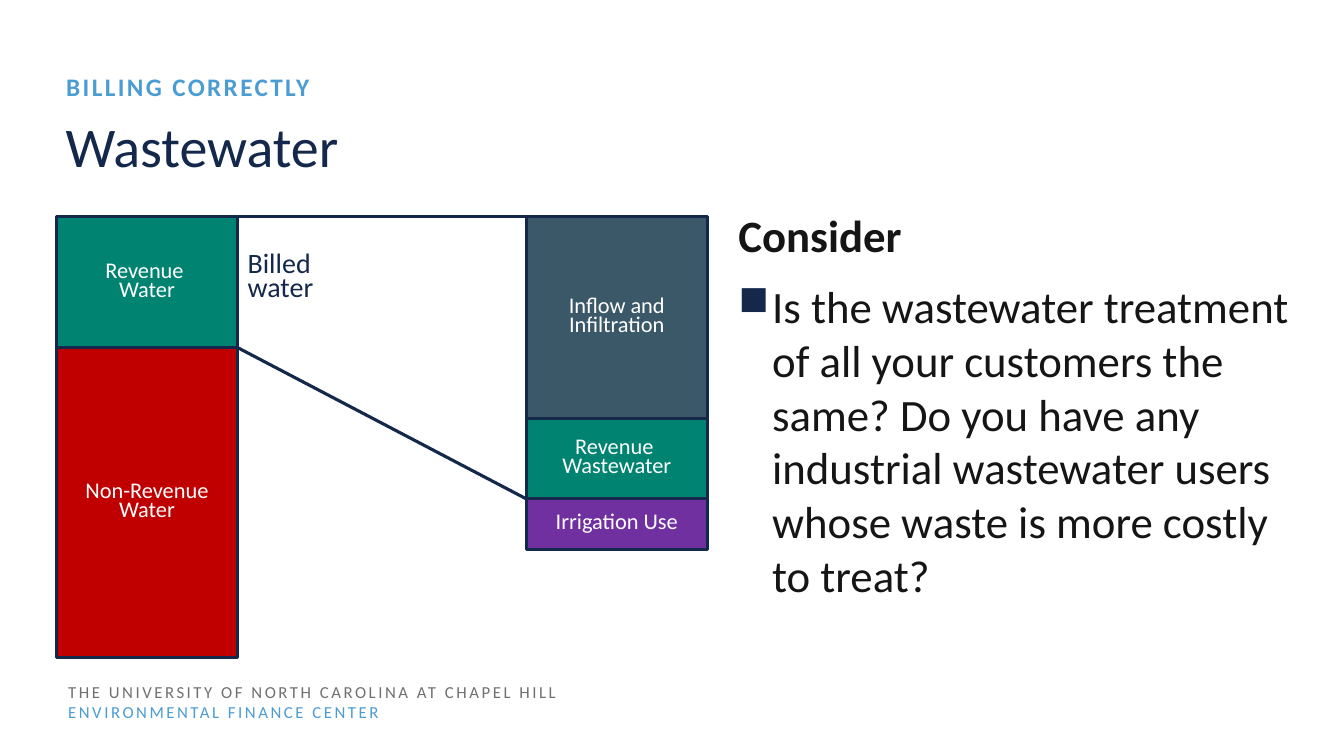
import pptx
import pptx.util
import pptx.dml.color
import pptx.enum.shapes
import pptx.enum.text
import pptx.oxml
import pptx.oxml.ns
import lxml.etree

Cm = pptx.util.Cm
Pt = pptx.util.Pt
ALIGN = pptx.enum.text.PP_ALIGN
ANCHOR = pptx.enum.text.MSO_ANCHOR

# Content
TITLE = "Wastewater"
TOPIC = "BILLING CORRECTLY"
AFFILIATION = [
    ("THE UNIVERSITY OF NORTH CAROLINA AT CHAPEL HILL", "gray"),
    ("ENVIRONMENTAL FINANCE CENTER", "sky"),
]
BILLED = "Billed water"
CONSIDER = "Consider"
QUESTION = ("Is the wastewater treatment of all your customers the same? "
            "Do you have any industrial wastewater users whose waste is "
            "more costly to treat?")

# Each stack, from the top: label lines, fill colour, height in cm
WATER = [
    (["Revenue ", "Water"], "green", 3.3),
    (["Non-Revenue", "Water"], "red", 7.8),
]
WASTEWATER = [
    (["Inflow and Infiltration"], "slate", 5.08),
    (["Revenue ", "Wastewater"], "green", 2.03),
    (["Irrigation Use"], "purple", 1.27),
]

COLORS = {
    "navy": "13284B", "sky": "4B9CD3", "gray": "707070", "ink": "151515",
    "white": "FFFFFF", "green": "008370", "red": "C00000",
    "slate": "3B5868", "purple": "7030A0",
}

# Layout in cm
STACK_TOP, STACK_WIDTH = 5.46, 4.57
WATER_LEFT, WASTEWATER_LEFT = 1.42, 13.26


def color(name):
    return pptx.dml.color.RGBColor.from_string(COLORS[name])


def write(frame, text, size=16, fill="white", bold=False, tracking=0,
          align=ALIGN.LEFT, line=1.0, before=0, after=0):
    """Add one formatted paragraph, using the empty first one if it is free."""
    first = frame.paragraphs[0]
    paragraph = frame.add_paragraph() if first.runs else first
    paragraph.alignment = align
    paragraph.line_spacing = line
    paragraph.space_before, paragraph.space_after = Pt(before), Pt(after)
    run = paragraph.add_run()
    run.text = text
    run.font.name, run.font.size, run.font.bold = "Calibri", Pt(size), bold
    run.font.color.rgb = color(fill)
    if tracking:
        run.font._element.set("spc", str(round(tracking * 100)))
    return paragraph


def prepare(frame, anchor=ANCHOR.TOP):
    frame.word_wrap = True
    frame.auto_size = pptx.enum.text.MSO_AUTO_SIZE.NONE
    frame.vertical_anchor = anchor
    return frame


def text_area(left, top, width, height, anchor=ANCHOR.TOP):
    area = slide.shapes.add_textbox(Cm(left), Cm(top), Cm(width), Cm(height))
    return prepare(area.text_frame, anchor)


def add_square_bullet(paragraph):
    properties = paragraph._p.get_or_add_pPr()
    properties.set("marL", str(Cm(0.85)))
    properties.set("indent", str(-Cm(0.85)))
    qn = pptx.oxml.ns.qn
    bullet_color = lxml.etree.SubElement(properties, qn("a:buClr"))
    lxml.etree.SubElement(bullet_color, qn("a:srgbClr"), val=COLORS["navy"])
    lxml.etree.SubElement(properties, qn("a:buSzPct"), val="92000")
    lxml.etree.SubElement(properties, qn("a:buChar"), char="■")


def add_stack(left, blocks):
    """Draw blocks downwards and return the bottom edge of each."""
    top, bottoms = STACK_TOP, []
    for label, fill, height in blocks:
        block = slide.shapes.add_shape(
            pptx.enum.shapes.MSO_SHAPE.RECTANGLE,
            Cm(left), Cm(top), Cm(STACK_WIDTH), Cm(height))
        block.shadow.inherit = False
        block.fill.solid()
        block.fill.fore_color.rgb = color(fill)
        block.line.color.rgb = color("navy")
        block.line.width = Pt(2)
        frame = prepare(block.text_frame, ANCHOR.MIDDLE)
        for text in label:
            write(frame, text, align=ALIGN.CENTER, line=0.7)
        top += height
        bottoms.append(top)
    return bottoms


def add_link(start_y, end_y):
    link = slide.shapes.add_connector(
        pptx.enum.shapes.MSO_CONNECTOR.STRAIGHT,
        Cm(WATER_LEFT + STACK_WIDTH), Cm(start_y),
        Cm(WASTEWATER_LEFT), Cm(end_y))
    link.line.color.rgb = color("navy")
    link.line.width = Pt(2.25)
    lxml.etree.SubElement(link._element.spPr, pptx.oxml.ns.qn("a:effectLst"))


deck = pptx.Presentation()
deck.slide_width, deck.slide_height = Cm(33.87), Cm(19.05)
slide = deck.slides.add_slide(deck.slide_layouts[5])

# Heading
title = slide.shapes.title
title.left, title.top = Cm(1.4), Cm(2.69)
title.width, title.height = Cm(31.09), Cm(2.01)
write(prepare(title.text_frame), TITLE, size=40, fill="navy")
write(text_area(1.42, 1.75, 31.09, 0.69), TOPIC,
      size=18, fill="sky", bold=True, tracking=1.7, line=0.9)

# Stacks, and the lines that bound the billed water between them
water_bottoms = add_stack(WATER_LEFT, WATER)
wastewater_bottoms = add_stack(WASTEWATER_LEFT, WASTEWATER)
add_link(STACK_TOP, STACK_TOP)
add_link(water_bottoms[0], wastewater_bottoms[1])
write(text_area(WATER_LEFT + STACK_WIDTH, 6.3, 2.77, 1.5), BILLED,
      size=20, fill="navy", line=0.7)

# Question for the audience
consider = text_area(18.36, 5.11, 15.06, 12.17)
write(consider, CONSIDER, size=32, fill="ink", bold=True, after=6)
add_square_bullet(
    write(consider, QUESTION, size=32, fill="ink", before=6.4, after=6))

# Footer
affiliation = text_area(1.47, 17.04, 19.89, 1.27, ANCHOR.MIDDLE)
for text, fill in AFFILIATION:
    write(affiliation, text, size=12, fill=fill, tracking=1.8)

deck.save("out.pptx")
